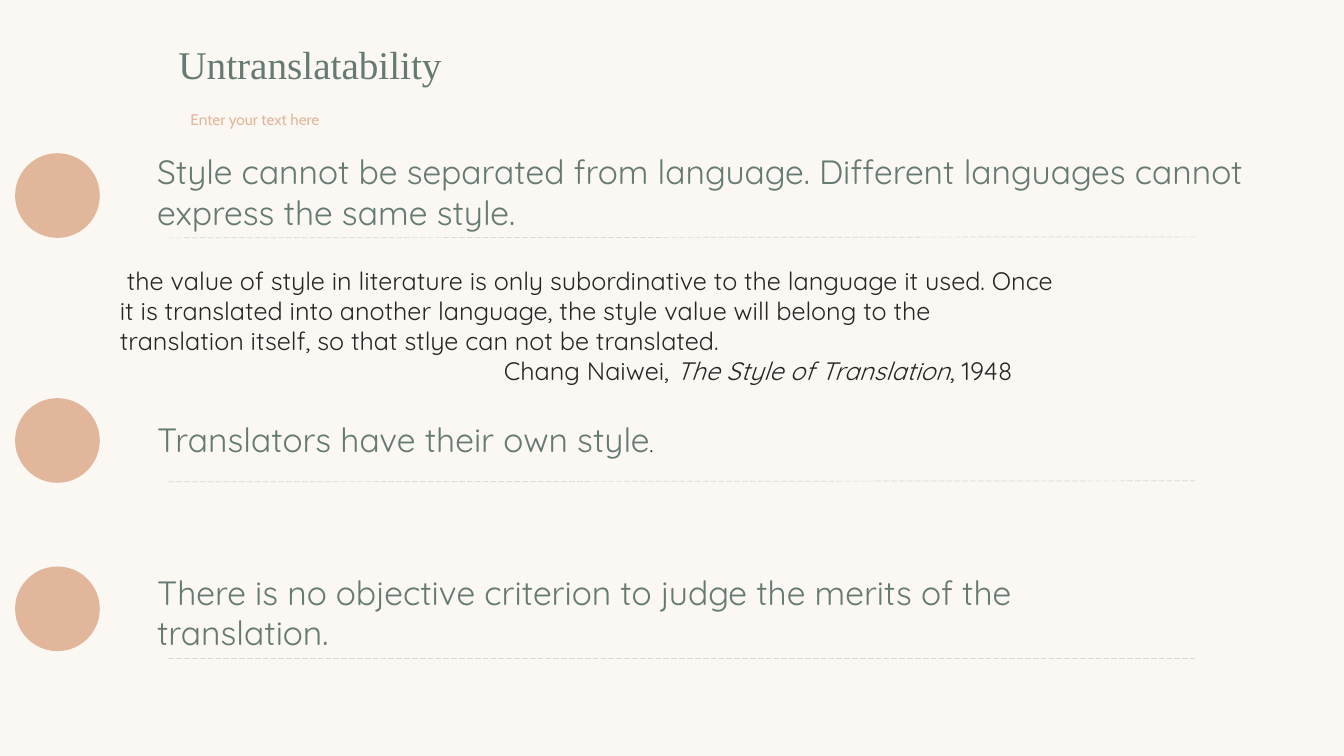
from lxml import etree
from pptx import Presentation
from pptx import util as u
from pptx.dml.color import RGBColor
from pptx.enum import dml, shapes, text
from pptx.oxml.ns import qn

COLOURS = {
    "background": "FBF7F3",
    "green": "647A72",
    "peach": "E2B69A",
    "dark": "262626",
    "rule": "D9D9D9",
}


def colour(name):
    return RGBColor.from_string(COLOURS[name])


def add_run(paragraph, wording, *, size, font="Quicksand", ink="green", italic=False):
    run = paragraph.add_run()
    run.text = wording
    run.font.size = u.Pt(size)
    run.font.name = font
    run.font.italic = italic
    run.font.color.rgb = colour(ink)


def indent(paragraph, left=0, first=0):
    """Set the left margin and the extra first-line indent, in inches."""
    properties = paragraph._p.get_or_add_pPr()
    properties.set("marL", str(u.Inches(left)))
    properties.set("indent", str(u.Inches(first)))


class SlideBuilder:
    def __init__(self, presentation):
        self.slide = presentation.slides.add_slide(presentation.slide_layouts[5])
        fill = self.slide.background.fill
        fill.solid()
        fill.fore_color.rgb = colour("background")

    def title(self, wording, left, top, width, height):
        shape = self.slide.shapes.title
        shape.left, shape.top = u.Inches(left), u.Inches(top)
        shape.width, shape.height = u.Inches(width), u.Inches(height)
        frame = shape.text_frame
        frame.word_wrap = False
        frame.auto_size = text.MSO_AUTO_SIZE.NONE
        frame.vertical_anchor = text.MSO_ANCHOR.TOP
        paragraph = frame.paragraphs[0]
        paragraph.alignment = text.PP_ALIGN.LEFT
        add_run(paragraph, wording, size=28, font="Times New Roman")

    def text_box(self, left, top, width, height):
        """Add a wrapping text box and return its first paragraph and frame."""
        box = self.slide.shapes.add_textbox(
            u.Inches(left), u.Inches(top), u.Inches(width), u.Inches(height))
        frame = box.text_frame
        frame.word_wrap = True
        return frame.paragraphs[0], frame

    def circle(self, top, left=0.15, size=0.84):
        shape = self.slide.shapes.add_shape(
            shapes.MSO_SHAPE.OVAL, u.Inches(left), u.Inches(top), u.Inches(size), u.Inches(size))
        shape.shadow.inherit = False
        shape.fill.solid()
        shape.fill.fore_color.rgb = colour("peach")
        shape.line.fill.background()

    def dashed_rule(self, start_y, end_y, left=1.67, right=11.85):
        connector = self.slide.shapes.add_connector(
            shapes.MSO_CONNECTOR.STRAIGHT,
            u.Inches(left), u.Inches(start_y), u.Inches(right), u.Inches(end_y))
        connector.line.color.rgb = colour("rule")
        connector.line.width = u.Pt(0.5)
        connector.line.dash_style = dml.MSO_LINE.LONG_DASH
        etree.SubElement(connector._element.spPr, qn("a:effectLst"))

    def point(self, wording, circle_top, text_box, rule, ending=""):
        """Add one statement with its circle and the dashed rule below it."""
        self.circle(circle_top)
        paragraph, _ = self.text_box(*text_box)
        add_run(paragraph, wording, size=24)
        if ending:
            add_run(paragraph, ending, size=12, font="Calibri", ink="dark")
        self.dashed_rule(*rule)


def main():
    presentation = Presentation()
    presentation.slide_width = u.Inches(13.33)
    presentation.slide_height = u.Inches(7.5)
    builder = SlideBuilder(presentation)

    builder.title("Untranslatability", 1.67, 0.35, 2.82, 0.57)
    subtitle, _ = builder.text_box(1.79, 1.04, 3.55, 0.29)
    subtitle.alignment = text.PP_ALIGN.JUSTIFY
    add_run(subtitle, "Enter your text here", size=11, font="Cabin", ink="peach")

    builder.point(
        "Style cannot be separated from language. "
        "Different languages cannot express the same style.",
        1.52, (1.46, 1.45, 11.19, 0.91), (2.36, 2.35))

    quote, frame = builder.text_box(1.09, 2.58, 9.48, 1.31)
    indent(quote, first=0.07)
    add_run(quote,
            "the value of style in literature is only subordinative to the language it used. "
            "Once it is translated into another language, the style value will belong to the "
            "translation itself, so that stlye can not be translated.", size=18, ink="dark")
    credit = frame.add_paragraph()
    indent(credit, left=3.81)
    add_run(credit, "Chang Naiwei, ", size=18, ink="dark")
    add_run(credit, "The Style of Translation", size=18, ink="dark", italic=True)
    add_run(credit, ", 1948", size=18, ink="dark")

    builder.point("Translators have their own style",
                  3.95, (1.46, 4.11, 5.88, 0.5), (4.78, 4.77), ending=".")
    builder.point("There is no objective criterion to judge the merits of the translation.",
                  5.62, (1.46, 5.62, 10.4, 0.91), (6.53, 6.53))

    presentation.save("out.pptx")


if __name__ == "__main__":
    main()
